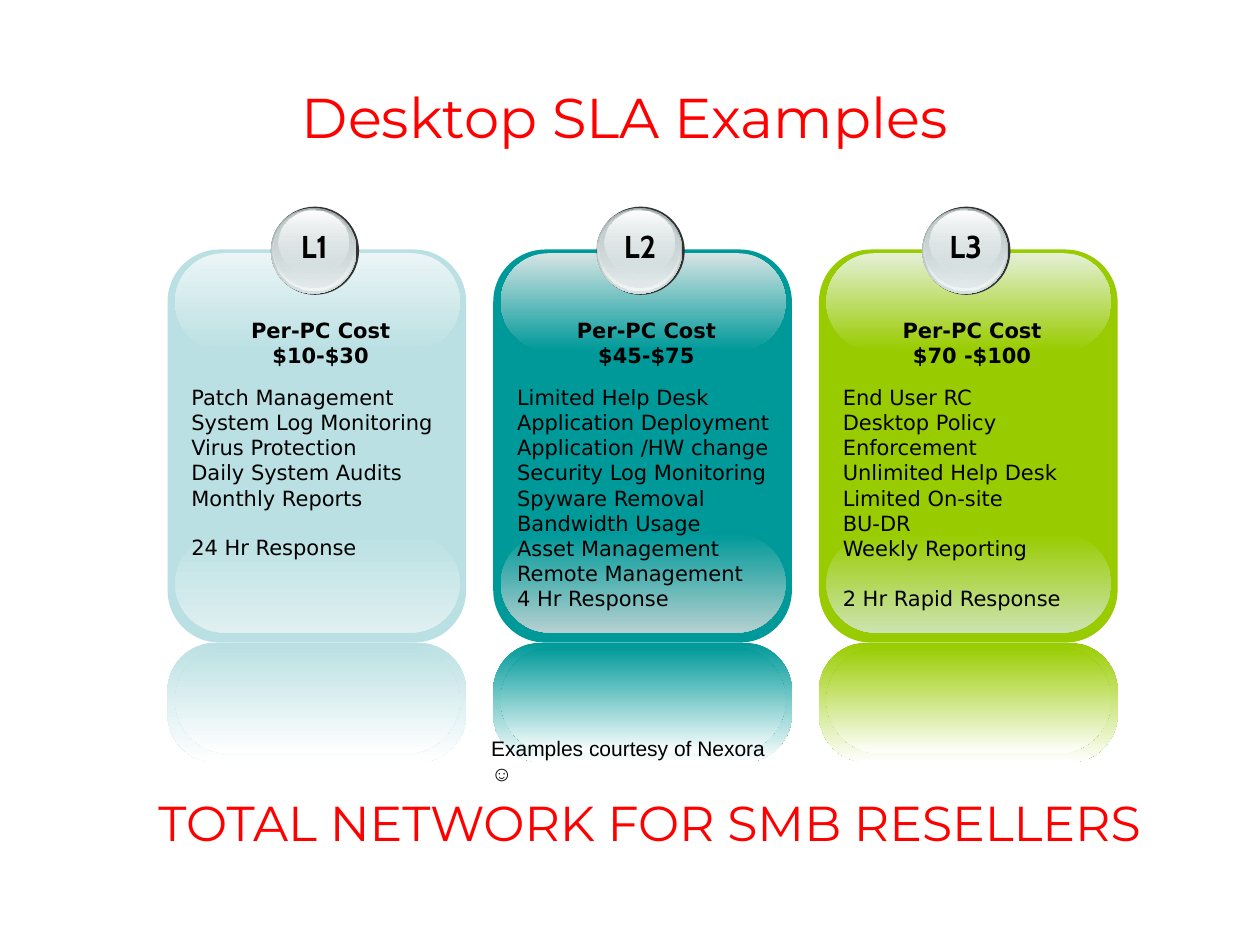
from dataclasses import dataclass

from lxml.etree import SubElement
from pptx import Presentation
from pptx.dml.color import RGBColor as Rgb
from pptx.enum.shapes import MSO_SHAPE as Kind
from pptx.enum.text import MSO_ANCHOR as Anchor, MSO_AUTO_SIZE as Auto, PP_ALIGN as Align
from pptx.oxml.ns import qn
from pptx.util import Inches, Pt

HUES = {
    "red": "FF0000", "black": "000000", "white": "FFFFFF",
    "rim": "333333", "steel": "99A1A2", "mist": "D6E1E2",
    "pearl": "F2F5F5", "ash": "C1CBCC",
    "ice": "BBE0E3", "ice low": "DFF0F1", "ice top": "EBF5F6",
    "teal": "009999", "teal low": "B5D0D0", "teal top": "D6E4E4",
    "lime": "99CC00", "lime low": "CCE3B0", "lime top": "E4F0D6",
}
LEFT, STEP = 1.33, 2.585
SMALL, LARGE = 9.4, 14


@dataclass
class Box:
    x: float
    y: float
    w: float
    h: float

    def emu(self, dx: float = 0) -> list:
        return [Inches(v) for v in (self.x + dx, self.y, self.w, self.h)]


@dataclass
class Line:
    text: str
    bold: bool = False
    align: Align = Align.LEFT
    gap: float = 0


@dataclass
class Part:
    box: Box
    hues: tuple
    round: float = 0
    alphas: tuple = (100, 100)


@dataclass
class Plan:
    level: str
    hue: str
    cost: str
    tasks: list
    reply: str
    gap: float


PLANS = [
    Plan("L1", "ice", "$10-$30",
         ["Patch Management", "System Log Monitoring", "Virus Protection",
          "Daily System Audits", "Monthly Reports"],
         "24 Hr Response", LARGE),
    Plan("L2", "teal", "$45-$75",
         ["Limited Help Desk", "Application Deployment", "Application /HW change",
          "Security Log Monitoring", "Spyware Removal", "Bandwidth Usage",
          "Asset Management", "Remote Management"],
         "4 Hr Response", 0),
    Plan("L3", "lime", "$70 -$100",
         ["End User RC", "Desktop Policy Enforcement", "Unlimited Help Desk",
          "Limited On-site", "BU-DR", "Weekly Reporting"],
         "2 Hr Rapid Response", LARGE),
]

BADGE = [
    Part(Box(0.82, 1.64, 0.7, 0.7), ("rim",)),
    Part(Box(0.82, 1.65, 0.68, 0.68), ("steel", "mist")),
    Part(Box(0.83, 1.65, 0.66, 0.66), ("mist", "pearl"), alphas=(0, 100)),
    Part(Box(0.84, 1.66, 0.63, 0.62), ("ash", "mist"), alphas=(100, 48)),
    Part(Box(0.88, 1.67, 0.56, 0.5), ("white", "mist"), alphas=(100, 38)),
]


def panel(hue: str) -> list[Part]:
    return [
        Part(Box(0, 1.98, 2.37, 3.12), (hue,), 0.175),
        Part(Box(0.04, 1.99, 2.3, 3.07), (hue,), 0.167),
        Part(Box(0.06, 4.24, 2.26, 0.78), (hue, hue + " low"), 0.5),
        Part(Box(0.06, 2.01, 2.26, 0.77), (hue + " top", hue), 0.5),
        Part(Box(0, 5.1, 2.37, 0.95), (hue, "white"), 0.404),
        Part(Box(0.06, 5.13, 2.26, 0.85), (hue, "white"), 0.5),
    ]


def color(name: str) -> Rgb:
    return Rgb.from_string(HUES[name])


def draw(slide, part: Part, dx: float) -> None:
    kind = Kind.ROUNDED_RECTANGLE if part.round else Kind.OVAL
    shape = slide.shapes.add_shape(kind, *part.box.emu(dx))
    shape.shadow.inherit = False
    shape.line.fill.background()
    if part.round:
        shape.adjustments[0] = part.round
    if len(part.hues) == 1:
        shape.fill.solid()
        shape.fill.fore_color.rgb = color(part.hues[0])
        return
    shape.fill.gradient()
    shape.fill.gradient_angle = 270
    for stop, hue in zip(shape.fill.gradient_stops, part.hues):
        stop.color.rgb = color(hue)
    tones = shape._element.spPr.iter(qn("a:srgbClr"))
    for tone, alpha in zip(tones, part.alphas):
        if alpha < 100:
            SubElement(tone, qn("a:alpha")).set("val", str(alpha * 1000))


def write(shape, lines: list[Line], *, size: float, font: str,
          hue: str = "black", wrap: bool = True, anchor: Anchor = Anchor.TOP) -> None:
    frame = shape.text_frame
    frame.word_wrap = wrap
    frame.auto_size = Auto.NONE
    frame.vertical_anchor = anchor
    for i, line in enumerate(lines):
        para = frame.add_paragraph() if i else frame.paragraphs[0]
        para.alignment = line.align
        if line.gap:
            para.space_before = Pt(line.gap)
        run = para.add_run()
        run.text = line.text
        run.font.size = Pt(size)
        run.font.name = font
        run.font.bold = line.bold
        run.font.color.rgb = color(hue)


def label(slide, box: Box, lines: list[Line], dx: float = 0, **style) -> None:
    write(slide.shapes.add_textbox(*box.emu(dx)), lines, **style)


def column(slide, plan: Plan, dx: float) -> None:
    for part in panel(plan.hue) + BADGE:
        draw(slide, part, dx)
    label(slide, Box(0.87, 1.75, 0.59, 0.5), [Line(plan.level, True, Align.CENTER)], dx,
          size=18, font="Cabin", wrap=False)
    lines = [Line("Per-PC Cost", True, Align.CENTER), Line(plan.cost, True, Align.CENTER)]
    lines += [Line(task, gap=0 if i else SMALL) for i, task in enumerate(plan.tasks)]
    lines.append(Line(plan.reply, gap=plan.gap))
    label(slide, Box(0.09, 2.47, 2.25, 2.66), lines, dx, size=12, font="DejaVu Sans")


def main() -> None:
    deck = Presentation()
    deck.slide_width, deck.slide_height = Inches(10), Inches(7.5)
    slide = deck.slides.add_slide(deck.slide_layouts[5])
    title = slide.shapes.title
    title.left, title.top, title.width, title.height = Box(0.42, 0.3, 9.08, 1.25).emu()
    write(title, [Line("Desktop SLA Examples", align=Align.CENTER)],
          size=32, font="Montserrat", hue="red", anchor=Anchor.MIDDLE)
    label(slide, Box(1.16, 6.24, 8.83, 0.57), [Line("TOTAL NETWORK FOR SMB RESELLERS")],
          size=28, font="Montserrat", hue="red")
    for i, plan in enumerate(PLANS):
        column(slide, plan, LEFT + i * STEP)
    label(slide, Box(3.8, 5.79, 2.5, 0.3), [Line("Examples courtesy of Nexora ☺")],
          size=12, font="Arial")
    deck.save("out.pptx")


if __name__ == "__main__":
    main()
